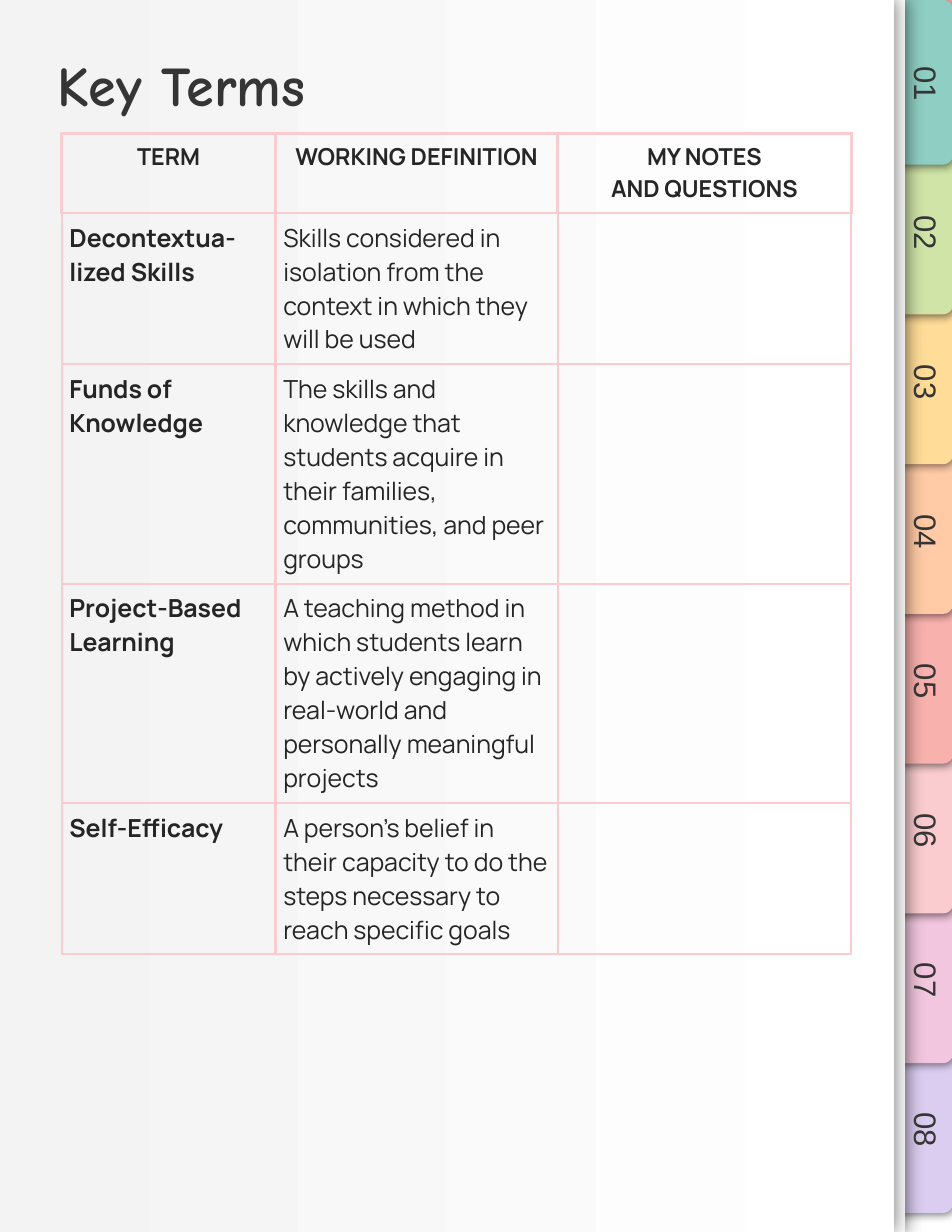
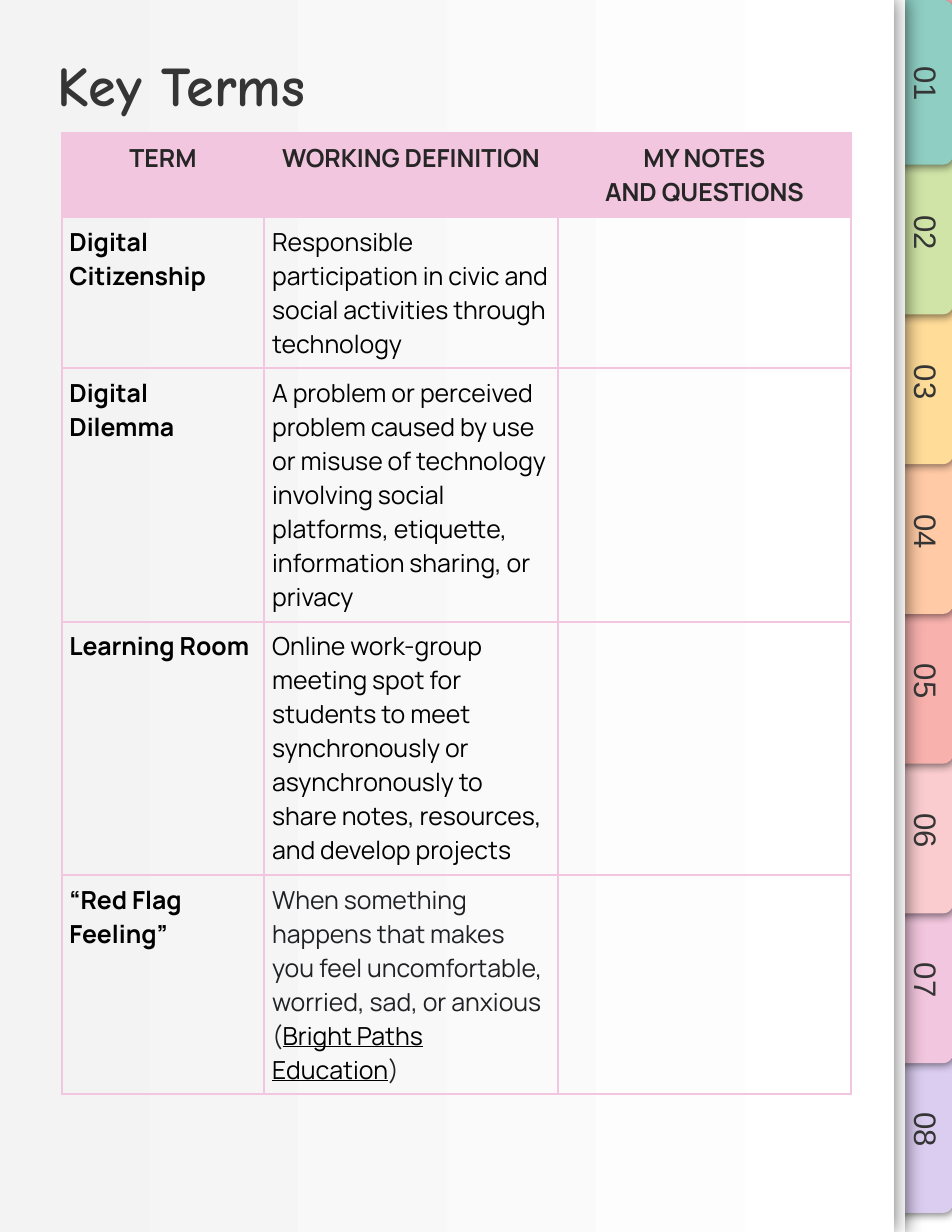
from lxml import etree
from pptx import Presentation
from pptx.dml.color import RGBColor
from pptx.enum.shapes import MSO_SHAPE, PP_PLACEHOLDER
from pptx.enum.text import MSO_ANCHOR, MSO_AUTO_SIZE, PP_ALIGN
from pptx.oxml.ns import qn
from pptx.util import Inches, Pt

RECT = MSO_SHAPE.RECTANGLE
TAB = MSO_SHAPE.ROUND_2_SAME_RECTANGLE
TITLE = PP_PLACEHOLDER.TITLE
TOP, BOTTOM = MSO_ANCHOR.TOP, MSO_ANCHOR.BOTTOM
LEFT, CENTER = PP_ALIGN.LEFT, PP_ALIGN.CENTER
NO_FIT = MSO_AUTO_SIZE.NONE

COLORS = {
    "teal": "8FCEC3", "green": "D0E4A7", "yellow": "FFDC98", "orange": "FFCAA5",
    "coral": "F8B1AD", "pink": "FACCCF", "orchid": "F2C6DE", "lilac": "DBCDF0",
    "white": "FFFFFF", "page": "F3F3F3", "black": "000000", "title": "353535",
    "header": "262626", "text": "252525", "quote": "202124",
}
TABS = ["teal", "green", "yellow", "orange", "coral", "pink", "orchid", "lilac"]
HEADERS = [["TERM"], ["WORKING DEFINITION"], ["MY NOTES", "AND QUESTIONS"]]
ROW_HEIGHTS = [0.28] + [1.16] * 4
TAB_SHADOW = {"blur": 5.6, "dist": 1.5, "angle": 61}
PAGE_SHADOW = {"blur": 12.4, "dist": 0.8, "angle": 0}

LEARNING_TERMS = [
    (["Decontextua-", "lized Skills"],
     ["Skills considered in isolation from the context in which they will be used"]),
    (["Funds of Knowledge"],
     ["The skills and knowledge that students acquire in their families, "
      "communities, and peer groups"]),
    (["Project-Based Learning"],
     ["A teaching method in which students learn by actively engaging in "
      "real-world and personally meaningful projects"]),
    (["Self-Efficacy"],
     ["A person’s belief in their capacity to do the steps necessary to reach "
      "specific goals"]),
]
DIGITAL_TERMS = [
    (["Digital Citizenship"],
     ["Responsible participation in civic and social activities through technology"]),
    (["Digital Dilemma"],
     ["A problem or perceived problem caused by use or misuse of technology "
      "involving social platforms, etiquette, information sharing, or privacy"]),
    (["Learning Room"],
     ["Online work-group meeting spot for students to meet synchronously or "
      "asynchronously to share notes, resources, and develop projects"]),
    (["“Red Flag Feeling”"],
     [[("When something happens that makes you feel uncomfortable, worried, sad, "
        "or anxious (", {"color": "quote"}),
       ("Bright Paths Education", {"underline": True}),
       (")", {"color": "quote"})]]),
]


def rgb(name):
    return RGBColor.from_string(COLORS[name])


def add_run(p, text, size=16, font="Manrope", color="text", bold=False, underline=None):
    r = p.add_run()
    r.text = text
    r.font.size = Pt(size)
    r.font.name = font
    r.font.bold = bold
    r.font.underline = underline
    r.font.color.rgb = rgb(color)


def put_text(tf, paragraphs, align=LEFT, **fmt):
    for i, runs in enumerate(paragraphs):
        p = tf.add_paragraph() if i else tf.paragraphs[0]
        p.alignment = align
        for text, changes in [(runs, {})] if isinstance(runs, str) else runs:
            add_run(p, text, **{**fmt, **changes})


def set_frame(tf, anchor):
    tf.word_wrap = True
    tf.auto_size = NO_FIT
    tf.vertical_anchor = anchor
    tf.margin_left = tf.margin_right = tf.margin_top = tf.margin_bottom = Inches(0.1)


def add_shadow(s, blur, dist, angle):
    effects = s.element.spPr.find(qn("a:effectLst"))
    shadow = etree.SubElement(
        effects, qn("a:outerShdw"), blurRad=str(Pt(blur)), dist=str(Pt(dist)),
        dir=str(angle * 60000), algn="bl", rotWithShape="0")
    color = etree.SubElement(shadow, qn("a:srgbClr"), val=COLORS["black"])
    etree.SubElement(color, qn("a:alpha"), val="50000")


def add_panel(slide, box, color, kind=RECT, line=None, shadow=None):
    s = slide.shapes.add_shape(kind, *map(Inches, box))
    s.shadow.inherit = False
    s.fill.solid()
    s.fill.fore_color.rgb = rgb(color)
    if line:
        s.line.color.rgb = rgb(line)
        s.line.width = Pt(0.75)
    else:
        s.line.fill.background()
    if shadow:
        add_shadow(s, **shadow)
    return s


def add_tab(slide, i, color):
    s = add_panel(slide, (7.51, 0.47 + i * 9.36 / 7, 1.47, 0.53), color, TAB,
                  shadow=TAB_SHADOW)
    s.adjustments[0] = 0.17
    s.rotation = 90


def add_tab_number(slide, i):
    s = slide.shapes.add_textbox(
        *map(Inches, (7.6, 0.43 + i * 9.34 / 7, 1.44, 0.63)))
    s.rotation = 90
    set_frame(s.text_frame, BOTTOM)
    put_text(s.text_frame, [f"{i + 1:02}"], align=CENTER, size=20, font="Arial",
             color="title")


def add_page(slide):
    s = add_panel(slide, (0, 0, 7.98, 11), "white", shadow=PAGE_SHADOW)
    s.fill.gradient()
    s.fill.gradient_angle = 0
    for stop, position, color in zip(s.fill.gradient_stops, (0, 1), ("page", "white")):
        stop.position = position
        stop.color.rgb = rgb(color)


def clear_layout(layout):
    for ph in list(layout.placeholders):
        if ph.placeholder_format.type != TITLE:
            layout.shapes.element.remove(ph.element)


def build_notebook(layout, slide):
    layout.background.fill.solid()
    layout.background.fill.fore_color.rgb = rgb("coral")
    add_panel(slide, (8.08, 8.58, 0.42, 2.42), "white", line="white")
    for i, color in reversed(list(enumerate(TABS))):
        add_tab(slide, i, color)
    add_panel(slide, (0.1, 0, 7.98, 11), "white", shadow=PAGE_SHADOW)
    add_page(slide)
    for i in range(len(TABS)):
        add_tab_number(slide, i)
    for s in list(slide.shapes):
        if not s.is_placeholder:
            layout.shapes.element.append(s.element)


def set_title(slide, text):
    s = slide.shapes.title
    s.left, s.top, s.width, s.height = map(Inches, (0.41, 0.35, 7.12, 0.63))
    set_frame(s.text_frame, TOP)
    put_text(s.text_frame, [text], size=36, font="Comic Neue", color="title", bold=True)


def set_borders(cell, color, widths):
    props = cell._tc.get_or_add_tcPr()
    for side, width in zip("LRTB", widths):
        line = etree.SubElement(props, qn(f"a:ln{side}"), w=str(Pt(width)))
        fill = etree.SubElement(line, qn("a:solidFill"))
        etree.SubElement(fill, qn("a:srgbClr"), val=COLORS[color])


def format_cell(cell, border, widths, fill=None):
    cell.margin_left = cell.margin_right = Inches(0.07)
    cell.margin_top = cell.margin_bottom = Inches(0.07)
    set_borders(cell, border, widths)
    if fill:
        cell.fill.solid()
        cell.fill.fore_color.rgb = rgb(fill)
    else:
        cell.fill.background()


def add_terms_table(slide, terms, col_widths, border, text_color,
                    header_size=16, header_line=1.5, header_fill=None):
    table = slide.shapes.add_table(
        len(ROW_HEIGHTS), len(col_widths), Inches(0.55), Inches(1.19),
        Inches(sum(col_widths)), Inches(sum(ROW_HEIGHTS))).table
    table.first_row = table.horz_banding = False
    for col, width in zip(table.columns, col_widths):
        col.width = Inches(width)
    for row, height in zip(table.rows, ROW_HEIGHTS):
        row.height = Inches(height)
    for c, heading in enumerate(HEADERS):
        cell = table.cell(0, c)
        format_cell(cell, border, [header_line] * 3 + [1.5], header_fill)
        put_text(cell.text_frame, heading, align=CENTER, size=header_size,
                 color="header", bold=True)
    for i, (term, definition) in enumerate(terms, 1):
        for c in range(len(col_widths)):
            format_cell(table.cell(i, c), border, [1.5] * 4)
        put_text(table.cell(i, 0).text_frame, term, color=text_color, bold=True)
        put_text(table.cell(i, 1).text_frame, definition, color=text_color)


def main():
    prs = Presentation()
    prs.slide_width, prs.slide_height = Inches(8.5), Inches(11)
    layout = prs.slide_layouts[5]
    clear_layout(layout)
    learning, digital = [prs.slides.add_slide(layout) for _ in range(2)]
    build_notebook(layout, learning)
    for slide in (learning, digital):
        set_title(slide, "Key Terms")
    add_terms_table(learning, LEARNING_TERMS, [1.91, 2.52, 2.62], "pink", "text",
                    header_size=15, header_line=2.25)
    add_terms_table(digital, DIGITAL_TERMS, [1.81, 2.62, 2.62], "orchid", "black",
                    header_fill="orchid")
    prs.save("out.pptx")


if __name__ == "__main__":
    main()
